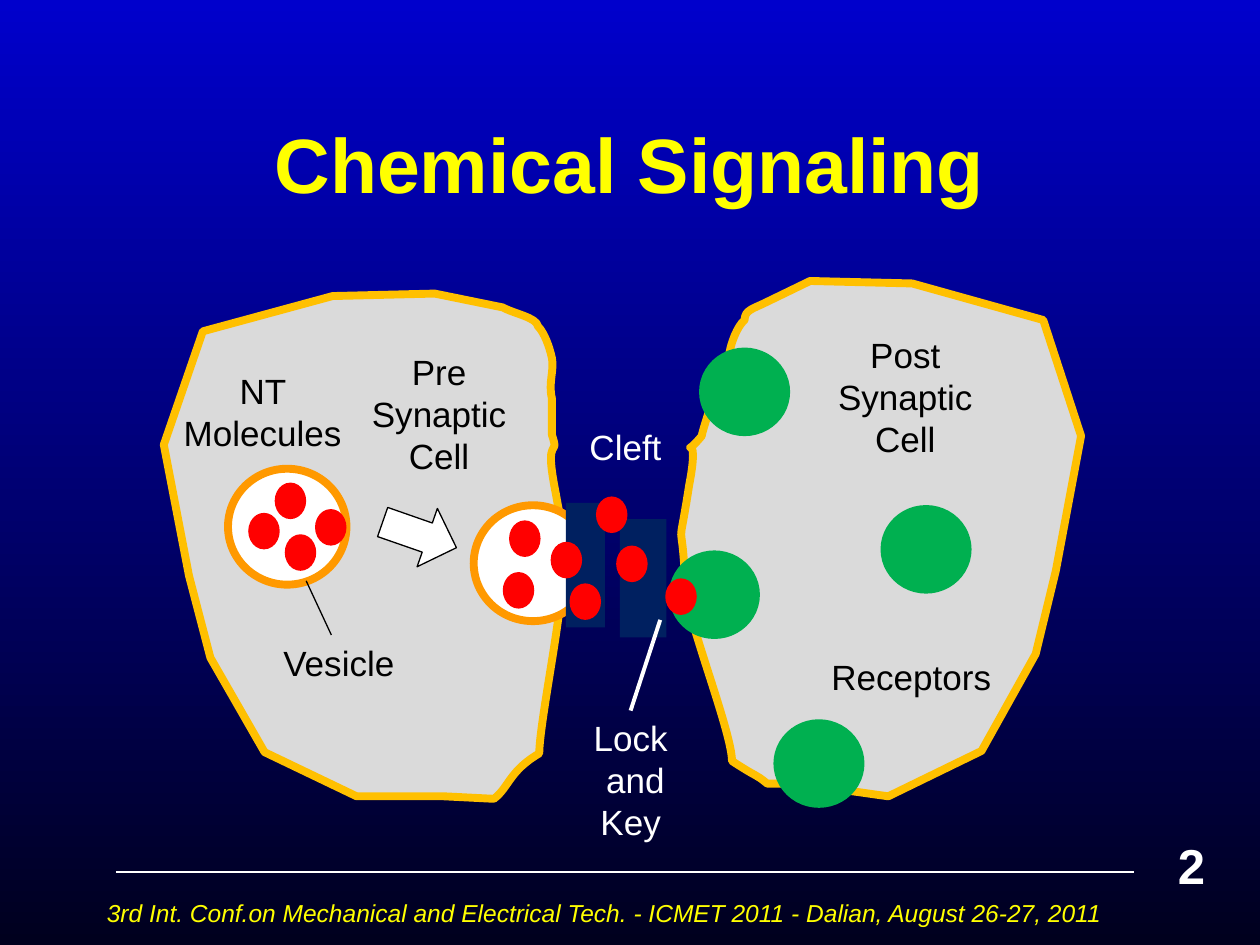
import pptx
import pptx.dml.color
import pptx.enum.shapes
import pptx.enum.text
import pptx.oxml.ns
import pptx.util
from lxml import etree

SCALE = 9144  # EMU per px, 100 px to the inch
ALIGN = pptx.enum.text.PP_ALIGN
SHAPE = pptx.enum.shapes.MSO_SHAPE
qn = pptx.oxml.ns.qn

WHITE, BLACK, YELLOW = "FFFFFF", "000000", "FFFF00"
RED, GREEN, NAVY, ORANGE = "FF0000", "00B050", "002060", "FF9900"
CELL_FILL, CELL_EDGE = "DADADA", "FFC000"
MOLECULE_SIZE = (25, 29)
RECEPTOR_SIZE = (66, 64)
VESICLE_SIZE = (94, 92)

# Outlines: a pair is a corner, six numbers are a Bezier curve (two handles, end).
PRE_CELL = [
    (441, 391), (431, 341, 445, 366, 438, 345), (438, 342, 438, 319, 438, 316),
    (435, 304, 440, 294, 438, 284), (436, 275, 432, 264, 427, 259),
    (426, 252, 408, 249, 399, 244), (345, 233), (264, 235), (161, 263),
    (130, 353), (150, 457), (167, 522), (210, 597), (283, 632), (352, 632),
    (392, 634), (404, 625, 404, 612, 428, 598), (428, 576, 445, 492, 445, 470),
    (447, 404, 452, 453, 441, 391),
]
POST_CELL = [
    (547, 385), (557, 333, 537, 370, 557, 346), (557, 343, 568, 311, 568, 308),
    (571, 296, 578, 287, 579, 280), (580, 273, 585, 259, 591, 254),
    (591, 246, 598, 245, 608, 240), (643, 223), (724, 225), (828, 254),
    (858, 346), (838, 453), (822, 519), (779, 596), (705, 632), (634, 622),
    (609, 622), (598, 613, 604, 619, 581, 604), (581, 581, 544, 488, 544, 466),
    (541, 399, 537, 449, 547, 385),
]


def px(length):
    return pptx.util.Emu(int(length * SCALE))


def rgb(code):
    return pptx.dml.color.RGBColor.from_string(code)


def paint(shape, fill, line=None, width=0.75):
    shape.shadow.inherit = False
    shape.fill.solid()
    shape.fill.fore_color.rgb = rgb(fill)
    if line:
        shape.line.color.rgb = rgb(line)
        shape.line.width = pptx.util.Pt(width)
    else:
        shape.line.fill.background()


def add_preset(shapes, kind, box, fill, line=None, width=0.75):
    shape = shapes.add_shape(kind, *map(px, box))
    paint(shape, fill, line, width)
    return shape


def add_vesicle(shapes, left, top):
    add_preset(shapes, SHAPE.OVAL, (left, top, *VESICLE_SIZE), WHITE, ORANGE, 4.5)


def add_molecules(shapes, places):
    for place in places:
        add_preset(shapes, SHAPE.OVAL, (*place, *MOLECULE_SIZE), RED)


def bend_segments(shape, outline):
    """Give the straight segments their Bezier handles where the outline has them."""
    segments = list(shape._element.iter(qn("a:lnTo")))
    for segment, part in zip(segments, outline[1:]):
        if len(part) == 2:
            continue
        segment.tag = qn("a:cubicBezTo")
        for index, (x, y) in enumerate((part[:2], part[2:4])):
            handle = etree.Element(qn("a:pt"), x=str(px(x) - shape.left),
                                   y=str(px(y) - shape.top))
            segment.insert(index, handle)


def add_cell(shapes, outline):
    first, *rest = [tuple(map(px, part[-2:])) for part in outline]
    builder = shapes.build_freeform(*first)
    builder.add_line_segments(rest, close=True)
    cell = builder.convert_to_shape()
    bend_segments(cell, outline)
    paint(cell, CELL_FILL, CELL_EDGE, 4.5)


def add_line(shapes, start, end, color, width):
    connector = shapes.add_connector(
        pptx.enum.shapes.MSO_CONNECTOR.STRAIGHT, *map(px, (*start, *end)))
    connector.line.color.rgb = rgb(color)
    connector.line.width = pptx.util.Pt(width)
    etree.SubElement(connector._element.spPr, qn("a:effectLst"))
    return connector


def write(shape, text, size, color, align=ALIGN.LEFT, bold=False, italic=False):
    frame = shape.text_frame
    frame.word_wrap = True
    frame.text = text
    for paragraph in frame.paragraphs:
        paragraph.alignment = align
        for run in paragraph.runs:
            run.font.name = "Arial"
            run.font.size = pptx.util.Pt(size)
            run.font.color.rgb = rgb(color)
            run.font.bold = bold
            run.font.italic = italic


def add_text(shapes, box, text, color, size=20, **style):
    shape = shapes.add_textbox(*map(px, box))
    write(shape, text, size, color, **style)
    return shape


def set_background(slide):
    fill = slide.background.fill
    fill.gradient()
    fill.gradient_angle = 270
    for stop, color in zip(fill.gradient_stops, ("0000CC", "00001E")):
        stop.color.rgb = rgb(color)


def set_title(slide, text):
    title = slide.shapes.title
    title.left, title.top, title.width, title.height = map(px, (75, 67, 850, 125))
    title.text_frame.vertical_anchor = pptx.enum.text.MSO_ANCHOR.MIDDLE
    write(title, text, 44, YELLOW, ALIGN.CENTER, bold=True)


def add_footer(shapes):
    add_line(shapes, (92, 692), (900, 692), WHITE, 0.75)
    add_text(shapes, (75, 708, 850, 42),
             "3rd Int. Conf.on Mechanical and Electrical Tech. - ICMET 2011"
             " - Dalian, August 26-27, 2011", YELLOW, 14, italic=True)
    add_text(shapes, (925, 658, 75, 57), "2", WHITE, 28, bold=True)


def add_synapse(shapes):
    add_cell(shapes, PRE_CELL)
    stored = shapes.add_group_shape().shapes
    add_vesicle(stored, 181, 372)
    add_molecules(stored, [(218, 383), (250, 404), (226, 424), (197, 407)])
    add_vesicle(shapes, 376, 401)
    arrow = add_preset(shapes, SHAPE.RIGHT_ARROW, (302, 400, 62, 49), WHITE, BLACK)
    arrow.rotation = 19.2

    add_cell(shapes, POST_CELL)
    for place in [(534, 440), (617, 574), (702, 404), (558, 279)]:
        add_preset(shapes, SHAPE.OVAL, (*place, *RECEPTOR_SIZE), GREEN, GREEN, 4.5)

    for box in [(492, 412, 37, 94), (449, 399, 31, 99)]:
        add_preset(shapes, SHAPE.RECTANGLE, box, NAVY)
    add_molecules(shapes, [(489, 433), (404, 413), (399, 454), (528, 459),
                           (437, 430), (452, 463), (473, 394)])


def add_labels(shapes):
    for box, text in [((650, 260, 137, 53), "Post Synaptic Cell"),
                      ((280, 273, 137, 53), "Pre Synaptic Cell"),
                      ((136, 288, 145, 62), "NT Molecules")]:
        add_text(shapes, box, text, BLACK, align=ALIGN.CENTER)
    add_text(shapes, (650, 515, 169, 53), "Receptors", BLACK)
    add_text(shapes, (215, 504, 169, 53), "Vesicle", BLACK)
    add_text(shapes, (458, 333, 105, 50), "Cleft", WHITE)
    lock = add_text(shapes, (448, 564, 105, 50), "Lock\n and\nKey", WHITE,
                    align=ALIGN.CENTER)
    add_line(shapes, (500, 564), (524, 492), WHITE, 2.25).begin_connect(lock, 0)
    add_line(shapes, (263, 504), (243, 461), BLACK, 0.75)


def main():
    presentation = pptx.Presentation()
    presentation.slide_width, presentation.slide_height = px(1000), px(750)
    slide = presentation.slides.add_slide(presentation.slide_layouts[5])
    set_background(slide)
    set_title(slide, "Chemical Signaling")
    add_footer(slide.shapes)
    add_synapse(slide.shapes)
    add_labels(slide.shapes)
    presentation.save("out.pptx")


if __name__ == "__main__":
    main()
